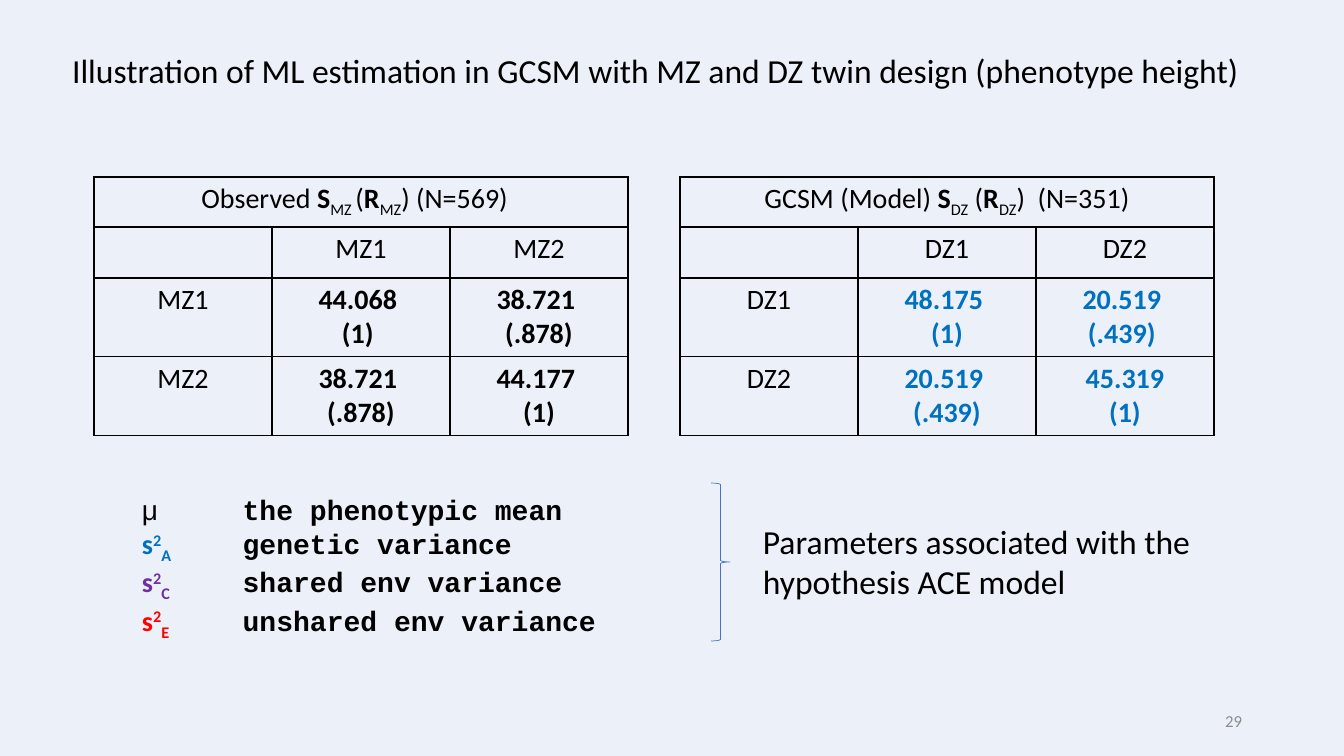
from lxml import etree
from pptx import Presentation
from pptx.dml.color import RGBColor
from pptx.enum.shapes import MSO_SHAPE
from pptx.enum.text import MSO_ANCHOR, MSO_AUTO_SIZE, PP_ALIGN
from pptx.oxml.ns import qn
from pptx.util import Pt

PX = 12192000 / 1344
INCH = 914400
LEFT, CENTER, RIGHT = PP_ALIGN.LEFT, PP_ALIGN.CENTER, PP_ALIGN.RIGHT
TOP, MIDDLE = MSO_ANCHOR.TOP, MSO_ANCHOR.MIDDLE
NO_FIT = MSO_AUTO_SIZE.NONE
BRACE = MSO_SHAPE.RIGHT_BRACE
TITLE_ONLY = 5
SUB, SUPER = -25000, 30000

COLORS = {
    "background": "ECF1F9",
    "text": "000000",
    "blue": "0070C0",
    "purple": "7030A0",
    "red": "FF0000",
    "brace": "4472C4",
    "number": "8C8C8C",
}


def px(*lengths):
    return [round(n * PX) for n in lengths]


def rgb(name):
    return RGBColor.from_string(COLORS[name])


def add_run(p, text, size=20, font="Calibri", color="text", bold=False, base=0):
    r = p.add_run()
    r.text = text
    r.font.size = Pt(size)
    r.font.name = font
    r.font.bold = bold
    r.font.color.rgb = rgb(color)
    if base:
        r.font._element.set("baseline", str(base))


def write(tf, paragraphs, align=LEFT, **fmt):
    """Each paragraph is a list of (text, format) runs."""
    for i, runs in enumerate(paragraphs):
        p = tf.add_paragraph() if i else tf.paragraphs[0]
        p.alignment = align
        for text, own in runs:
            add_run(p, text, **{**fmt, **own})


def add_box(s, box, paragraphs, anchor=TOP, wrap=True, **fmt):
    tf = s.shapes.add_textbox(*px(*box)).text_frame
    tf.word_wrap = wrap
    tf.vertical_anchor = anchor
    write(tf, paragraphs, **fmt)
    return tf


def set_borders(cell):
    tcPr = cell._tc.get_or_add_tcPr()
    for i, side in enumerate(("lnL", "lnR", "lnT", "lnB")):
        ln = etree.Element(qn("a:" + side), w=str(Pt(1)))
        fill = etree.SubElement(ln, qn("a:solidFill"))
        etree.SubElement(fill, qn("a:srgbClr"), val=COLORS["text"])
        tcPr.insert(i, ln)


# Title
def add_title(s, box, text):
    title = s.shapes.title
    title.left, title.top, title.width, title.height = px(*box)
    tf = title.text_frame
    tf.word_wrap = True
    tf.auto_size = NO_FIT
    tf.vertical_anchor = TOP
    write(tf, [[(text, {})]], size=24)


# Covariance table of one twin group
def add_twin_table(s, box, group, heading, values, color):
    table = s.shapes.add_table(4, 3, *px(*box)).table
    table.first_row = table.horz_banding = False
    for col in table.columns:
        col.width = px(box[2] / 3)[0]
    for row, height in zip(table.rows, (50, 51, 78, 79)):
        row.height = px(height)[0]
    for cell in table.iter_cells():
        cell.fill.background()
        set_borders(cell)
    table.cell(0, 0).merge(table.cell(0, 2))
    write(table.cell(0, 0).text_frame, [heading], align=CENTER)
    for i in (1, 2):
        label = [[(f"{group}{i}", {})]]
        for cell in (table.cell(1, i), table.cell(i + 1, 0)):
            write(cell.text_frame, label, align=CENTER)
        for j in (1, 2):
            lines = [[(text, {})] for text in values[i - 1][j - 1]]
            write(table.cell(i + 1, j).text_frame, lines,
                  align=CENTER, bold=True, color=color)


# Parameter list: symbol, tab, meaning
def add_parameters(s, box):
    meaning = {"font": "Courier New", "bold": True}
    rows = [[("μ\t", {"font": "Arial"}), ("the phenotypic mean", meaning)]]
    for letter, color, text in (("A \t", "blue", "genetic variance"),
                                ("C\t", "purple", "shared env variance"),
                                ("E \t", "red", "unshared env variance")):
        symbol = {"color": color, "bold": True}
        rows.append([("s", symbol), ("2", {**symbol, "base": SUPER}),
                     (letter, {**symbol, "base": SUB}), (text, meaning)])
    tf = add_box(s, box, rows)
    for p in tf.paragraphs:
        tabs = etree.SubElement(p._p.get_or_add_pPr(), qn("a:tabLst"))
        etree.SubElement(tabs, qn("a:tab"), pos=str(INCH), algn="l")


# Brace with its caption
def add_brace_note(s, box, lines):
    x, y, w, h = box
    brace = s.shapes.add_shape(BRACE, *px(x, y, 19, h))
    brace.shadow.inherit = False
    brace.fill.background()
    brace.line.color.rgb = rgb("brace")
    brace.line.width = Pt(0.5)
    add_box(s, (x + 42, y + 33, w - 42, 92), [[(t, {})] for t in lines],
            wrap=False, size=24)


def main():
    prs = Presentation()
    prs.slide_width, prs.slide_height = px(1344, 756)
    s = prs.slides.add_slide(prs.slide_layouts[TITLE_ONLY])
    s.background.fill.solid()
    s.background.fill.fore_color.rgb = rgb("background")

    add_title(s, (62, 45, 1235, 50),
              "Illustration of ML estimation in GCSM with MZ and DZ "
              "twin design (phenotype height)")

    bold, sub = {"bold": True}, {"base": SUB}
    add_twin_table(
        s, (94, 177, 534, 258), "MZ",
        [("Observed ", {}), ("S", bold), ("MZ ", sub), ("(", {}),
         ("R", bold), ("MZ", sub), (") (N=569)  ", {})],
        [[("44.068 ", "(1) "), ("38.721 ", "(.878)")],
         [("38.721 ", "(.878)"), ("44.177 ", "(1)")]], "text")
    add_twin_table(
        s, (680, 177, 534, 258), "DZ",
        [("GCSM (Model) ", {}), ("S", bold), ("DZ", sub), (" (", {}),
         ("R", bold), ("DZ", sub), (")  (N=351)", {})],
        [[("48.175 ", "(1)"), ("20.519 ", "(.439) ")],
         [("20.519 ", "(.439)"), ("45.319", "(1)")]], "blue")

    add_parameters(s, (132, 488, 551, 146))
    add_brace_note(s, (711, 483, 501, 158),
                   ("Parameters associated with the", "hypothesis ACE model"))

    # Slide number
    add_box(s, (950, 701, 302, 40), [[("29", {})]], anchor=MIDDLE,
            align=RIGHT, size=12, color="number")
    prs.save("out.pptx")


if __name__ == "__main__":
    main()
